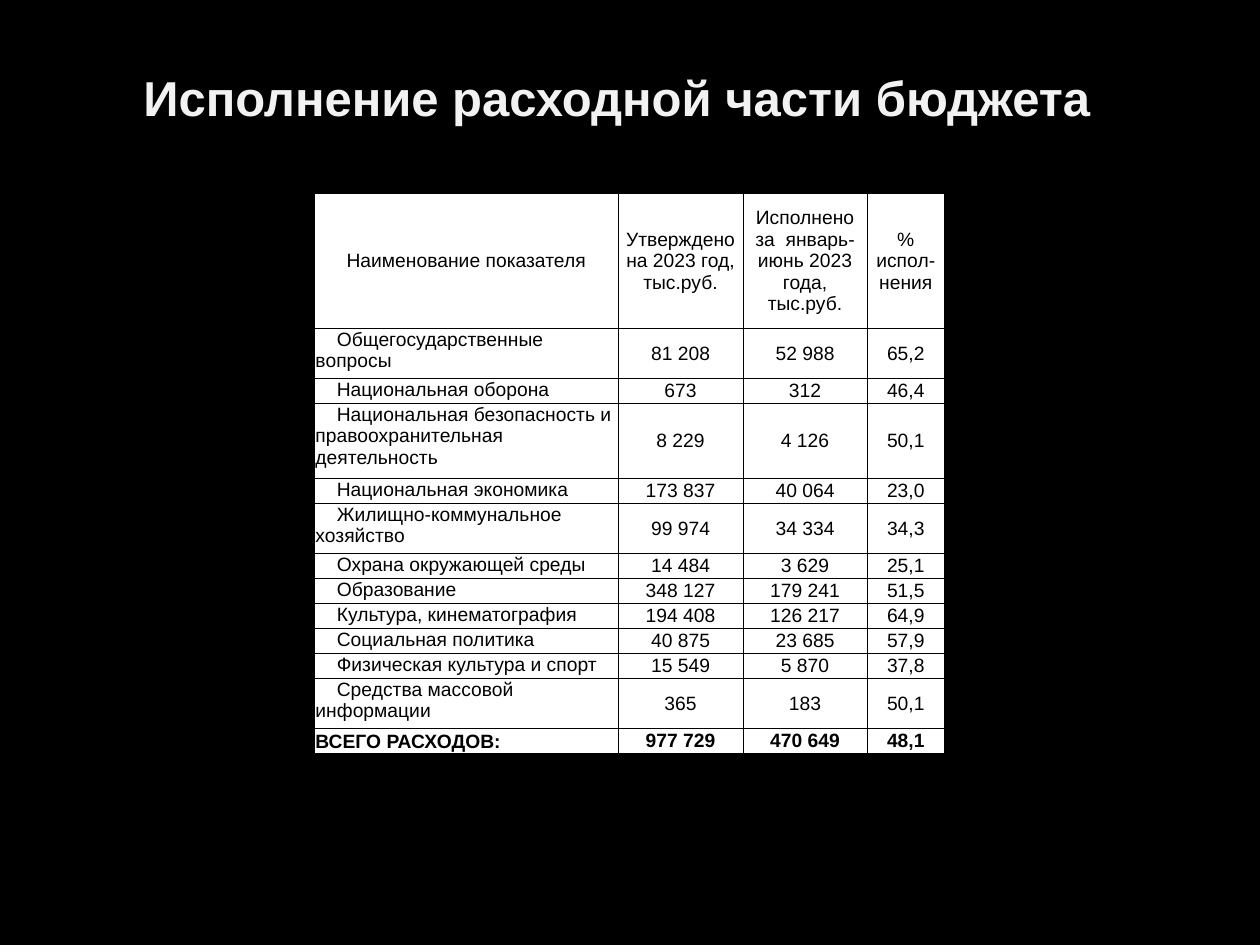
"""Build the slide on budget expenditure execution for January-June 2023."""
from lxml import etree
from pptx import Presentation
from pptx import util as u
from pptx.dml.color import RGBColor
from pptx.enum import text
from pptx.oxml.ns import qn

BLACK = RGBColor(0x00, 0x00, 0x00)
WHITE = RGBColor(0xFF, 0xFF, 0xFF)
OFF_WHITE = RGBColor(0xF2, 0xF2, 0xF2)

HEADINGS = ("Наименование показателя", "Утверждено на 2023 год, тыс.руб.",
            "Исполнено за  январь-июнь 2023 года, тыс.руб.", "% испол-нения")
EXPENSES = [
    ("Общегосударственные вопросы", "81 208", "52 988", "65,2"),
    ("Национальная оборона", "673", "312", "46,4"),
    ("Национальная безопасность и правоохранительная деятельность", "8 229", "4 126", "50,1"),
    ("Национальная экономика", "173 837", "40 064", "23,0"),
    ("Жилищно-коммунальное хозяйство", "99 974", "34 334", "34,3"),
    ("Охрана окружающей среды", "14 484", "3 629", "25,1"),
    ("Образование", "348 127", "179 241", "51,5"),
    ("Культура, кинематография", "194 408", "126 217", "64,9"),
    ("Социальная политика", "40 875", "23 685", "57,9"),
    ("Физическая культура и спорт", "15 549", "5 870", "37,8"),
    ("Средства массовой информации", "365", "183", "50,1"),
]
TOTAL = ("ВСЕГО РАСХОДОВ:", "977 729", "470 649", "48,1")
LINES_PER_ROW = (2, 1, 3, 1, 2, 1, 1, 1, 1, 1, 2, 1)
COLUMN_WIDTHS = (6.12, 2.52, 2.5, 1.56)
HEADING_HEIGHT, BODY_HEIGHT = 2.72, 8.57


def write(frame, wording, size=11, color=BLACK, bold=False,
          align=text.PP_ALIGN.CENTER, indent=0):
    paragraph = frame.paragraphs[0]
    paragraph.alignment = align
    if indent:
        paragraph._p.get_or_add_pPr().set("indent", str(u.Cm(indent)))
    run = paragraph.add_run()
    run.text = wording
    run.font.name = "Arial"
    run.font.size = u.Pt(size)
    run.font.bold = bold
    run.font.color.rgb = color


def draw_borders(cell, color=BLACK, width=0.5):
    properties = cell._tc.get_or_add_tcPr()
    for position, side in enumerate(("a:lnL", "a:lnR", "a:lnT", "a:lnB")):
        line = etree.Element(qn(side), w=str(u.Pt(width)))
        fill = etree.SubElement(line, qn("a:solidFill"))
        etree.SubElement(fill, qn("a:srgbClr"), val=str(color))
        properties.insert(position, line)


presentation = Presentation()
presentation.slide_width, presentation.slide_height = u.Cm(25.4), u.Cm(19.05)
slide = presentation.slides.add_slide(presentation.slide_layouts[5])
slide.background.fill.solid()
slide.background.fill.fore_color.rgb = BLACK

heading = slide.shapes.title
heading.left, heading.top = u.Cm(1.27), u.Cm(0.74)
heading.width, heading.height = u.Cm(22.86), u.Cm(2.44)
heading.text_frame.vertical_anchor = text.MSO_ANCHOR.MIDDLE
heading.text_frame.margin_right = u.Cm(0.79)
write(heading.text_frame, "Исполнение расходной части бюджета",
      size=28, color=OFF_WHITE, bold=True)

rows = [HEADINGS, *EXPENSES, TOTAL]
budget = slide.shapes.add_table(
    len(rows), len(HEADINGS), u.Cm(6.34), u.Cm(3.89),
    u.Cm(sum(COLUMN_WIDTHS)), u.Cm(HEADING_HEIGHT + BODY_HEIGHT)).table
budget.first_row = budget.horz_banding = False

for column, width in zip(budget.columns, COLUMN_WIDTHS):
    column.width = u.Cm(width)
line_height = BODY_HEIGHT / sum(LINES_PER_ROW)
row_heights = [HEADING_HEIGHT] + [lines * line_height for lines in LINES_PER_ROW]

for row_number, (values, height) in enumerate(zip(rows, row_heights)):
    budget.rows[row_number].height = u.Cm(height)
    is_total = values is TOTAL
    for column_number, value in enumerate(values):
        cell = budget.cell(row_number, column_number)
        cell.margin_left = cell.margin_right = cell.margin_top = u.Cm(0.02)
        cell.margin_bottom = 0
        cell.fill.solid()
        cell.fill.fore_color.rgb = WHITE
        draw_borders(cell)
        if column_number or values is HEADINGS:
            cell.vertical_anchor = text.MSO_ANCHOR.MIDDLE
            write(cell.text_frame, value, bold=is_total)
        else:
            cell.vertical_anchor = text.MSO_ANCHOR.BOTTOM if is_total else text.MSO_ANCHOR.TOP
            write(cell.text_frame, value, bold=is_total, align=text.PP_ALIGN.LEFT,
                  indent=0 if is_total else 0.43)

presentation.save("out.pptx")
